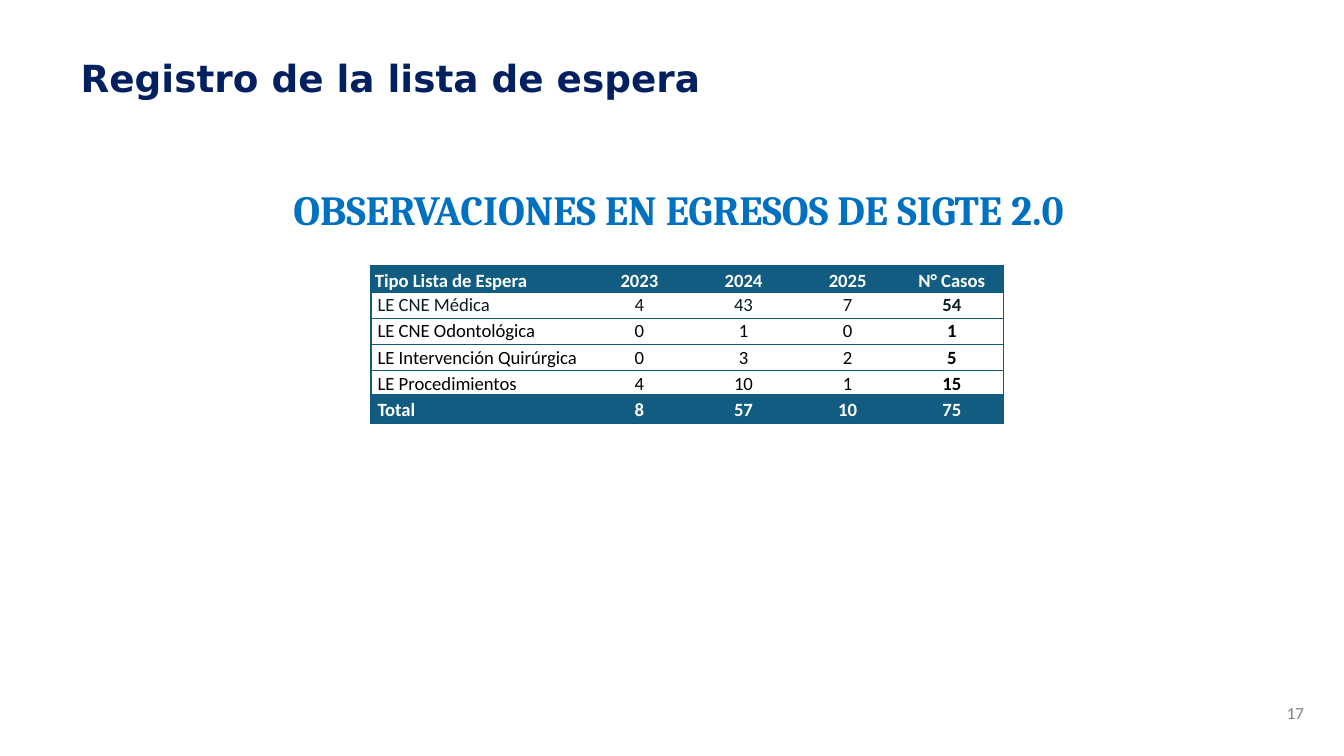
from lxml.etree import SubElement
from pptx import Presentation
from pptx.dml.color import RGBColor
from pptx.enum.text import MSO_ANCHOR as ANCHOR, MSO_AUTO_SIZE as AUTO, PP_ALIGN as ALIGN
from pptx.oxml.ns import qn
from pptx.util import Inches, Pt

WIDTH = 10
HEIGHT = WIDTH * 9 / 16
TITLE = "Registro de la lista de espera"
HEADING = "OBSERVACIONES EN EGRESOS DE SIGTE 2.0"
PAGE = "17"
ROWS = [
    ("Tipo Lista de Espera", "2023", "2024", "2025", "N° Casos"),
    ("LE CNE Médica", "4", "43", "7", "54"),
    ("LE CNE Odontológica", "0", "1", "0", "1"),
    ("LE Intervención Quirúrgica", "0", "3", "2", "5"),
    ("LE Procedimientos", "4", "10", "1", "15"),
    ("Total", "8", "57", "10", "75"),
]
TABLE_AT = (2.76, 1.98)
TABLE_SIZE = (4.71, 1.17)
LABEL_W = 1.61
BAND, RULE = "115C80", "0E5B80"
THIN, THICK = 0.75, 4


def color(value):
    return RGBColor.from_string(value)


def write(tf, text, size, font="Calibri", fill="000000", bold=False, align=ALIGN.LEFT):
    p = tf.paragraphs[0]
    p.alignment = align
    r = p.add_run()
    r.text = text
    r.font.name, r.font.size, r.font.bold = font, Pt(size), bold
    r.font.color.rgb = color(fill)


def place(sp, left, top, width, height):
    """Move and size a shape, and return its wrapping, top-anchored text frame."""
    sp.left, sp.top, sp.width, sp.height = map(Inches, (left, top, width, height))
    tf = sp.text_frame
    tf.word_wrap, tf.auto_size, tf.vertical_anchor = True, AUTO.NONE, ANCHOR.TOP
    return tf


def border(cell, side, width, fill=RULE):
    """Draw one side (L, R, T or B) of a cell; a width of 0 hides it."""
    ln = SubElement(cell._tc.get_or_add_tcPr(), qn(f"a:ln{side}"), w=str(int(Pt(width))))
    if width:
        solid = SubElement(ln, qn("a:solidFill"))
        SubElement(solid, qn("a:srgbClr"), val=fill)
    else:
        SubElement(ln, qn("a:noFill"))


def add_cases_table(slide):
    n_rows, n_cols = len(ROWS), len(ROWS[0])
    last_row, last_col = n_rows - 1, n_cols - 1
    table_w, table_h = TABLE_SIZE
    table = slide.shapes.add_table(n_rows, n_cols, *map(Inches, TABLE_AT + TABLE_SIZE)).table
    table.horz_banding = False
    widths = [LABEL_W] + [(table_w - LABEL_W) / last_col] * last_col
    for column, width in zip(table.columns, widths):
        column.width = Inches(width)

    for i, row in enumerate(ROWS):
        table.rows[i].height = Inches(table_h / n_rows)
        header, band = i == 0, i in (0, last_row)
        for j, text in enumerate(row):
            cell = table.cell(i, j)
            cell.margin_right = cell.margin_top = cell.margin_bottom = 0
            cell.margin_left = Inches(0 if j else 0.03 if header else 0.05)
            cell.vertical_anchor = ANCHOR.BOTTOM if header else ANCHOR.MIDDLE
            write(cell.text_frame, text, 10, bold=band or j == last_col,
                  fill="FFFFFF" if band else "0A1D21" if i == 1 else "000000",
                  align=ALIGN.CENTER if j else ALIGN.LEFT)
            border(cell, "L", 0 if j else THIN)
            border(cell, "R", THIN if j == last_col else 0)
            for side, edge in (("T", i), ("B", i + 1)):
                above_total = edge == last_row
                border(cell, side, THICK if above_total else THIN,
                       BAND if above_total else RULE)
            if band:
                cell.fill.solid()
                cell.fill.fore_color.rgb = color(BAND)
            else:
                cell.fill.background()


def main():
    prs = Presentation()
    prs.slide_width, prs.slide_height = Inches(WIDTH), Inches(HEIGHT)
    slide = prs.slides.add_slide(prs.slide_layouts[5])

    tf = place(slide.shapes.title, 0.5, 0.36, 7.05, 0.45)
    write(tf, TITLE, 20, font="DejaVu Sans", fill="002060", bold=True)

    box = slide.shapes.add_textbox(0, 0, 0, 0)
    tf = place(box, 1.63, 1.32, 6.72, 0.71)
    tf.margin_left = Inches(0.22)
    write(tf, HEADING, 22.2, font="Cambria", fill="0070C0", bold=True, align=ALIGN.CENTER)

    add_cases_table(slide)

    box = slide.shapes.add_textbox(0, 0, 0, 0)
    tf = place(box, 7.47, 5.18, 2.33, 0.23)
    write(tf, PAGE, 9, fill="808080", align=ALIGN.RIGHT)

    prs.save("out.pptx")


if __name__ == "__main__":
    main()
